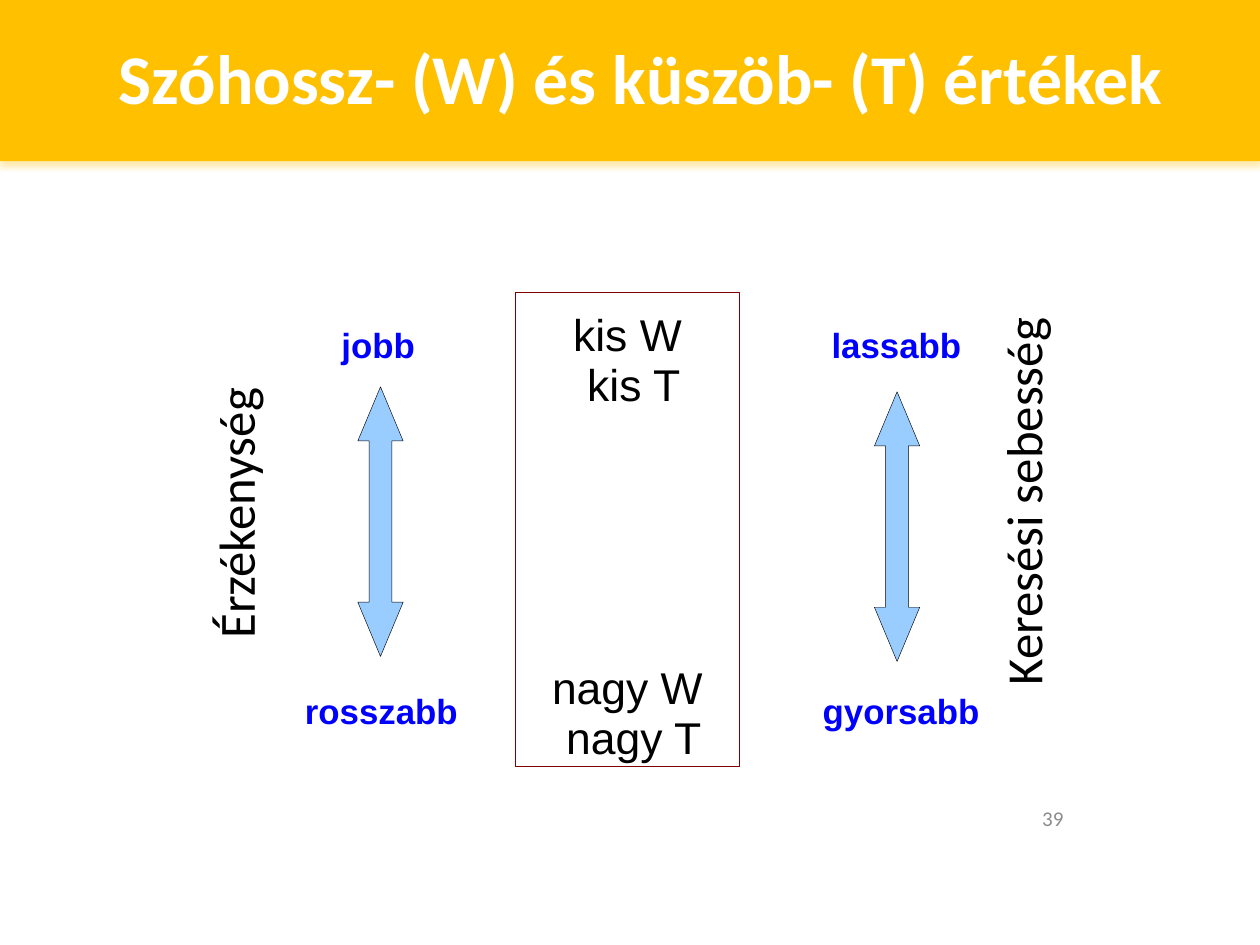
"""Build the slide on word length and threshold values."""
from lxml.etree import SubElement
from pptx import Presentation
from pptx.dml.color import RGBColor
from pptx.enum.shapes import MSO_SHAPE as Kind
from pptx.enum.text import MSO_ANCHOR as Anchor, PP_ALIGN as Align
from pptx.oxml.ns import qn
from pptx.util import Inches, Pt

GOLD = RGBColor(0xFF, 0xC0, 0x00)
WHITE = RGBColor(0xFF, 0xFF, 0xFF)
BLACK = RGBColor(0x00, 0x00, 0x00)
BLUE = RGBColor(0x00, 0x00, 0xFF)
SKY = RGBColor(0x99, 0xCC, 0xFF)
MAROON = RGBColor(0x7F, 0x00, 0x00)
GRAY = RGBColor(0x8C, 0x8C, 0x8C)

TITLE = "Szóhossz- (W) és küszöb- (T) értékek"
NUMBER = "39"
SIZES = [("kis W", 0, 0), ("kis T", 0.1, 0), ("nagy W", 0, 145), ("nagy T", 0.1, 0)]
AXES = [("Érzékenység", (1.7, 3, 0.41, 2.07)),
        ("Keresési sebesség", (7.95, 2.43, 0.41, 3.01))]
ENDS = [("jobb", 2.71, 2.56, 0.61), ("rosszabb", 2.42, 5.46, 1.24),
        ("lassabb", 6.6, 2.56, 1.06), ("gyorsabb", 6.53, 5.46, 1.27)]
ARROWS = [(2.84, 3.07), (6.94, 3.11)]
WIDE, TALL, HEAD = 0.36, 2.14, 0.43


def paint(shape, fill=None, line=None):
    shape.shadow.inherit = False
    if fill is None:
        shape.fill.background()
    else:
        shape.fill.solid()
        shape.fill.fore_color.rgb = fill
    if line is None:
        shape.line.fill.background()
    else:
        shape.line.color.rgb = line
        shape.line.width = Pt(0.25)


def add_box(slide, box, fill=None, line=None):
    shape = slide.shapes.add_shape(Kind.RECTANGLE, *map(Inches, box))
    paint(shape, fill, line)
    return shape


def add_arrow(slide, left, top):
    mid, neck, foot = WIDE / 2, WIDE / 4, TALL - HEAD
    half = [(mid, 0), (WIDE, HEAD), (WIDE - neck, HEAD),
            (WIDE - neck, foot), (WIDE, foot), (mid, TALL)]
    ring = half + [(WIDE - x, y) for x, y in half[-2:0:-1]]
    points = [(Inches(left + x), Inches(top + y)) for x, y in ring]
    pen = slide.shapes.build_freeform(*points[0])
    pen.add_line_segments(points[1:], close=True)
    paint(pen.convert_to_shape(), SKY, BLACK)


def add_shade(shape, color):
    effects = shape._element.spPr.find(qn("a:effectLst"))
    shade = SubElement(effects, qn("a:outerShdw"), blurRad=str(Pt(3.5)),
                       dist=str(Pt(2.2)), dir="5400000", rotWithShape="0")
    tint = SubElement(shade, qn("a:srgbClr"), val=str(color))
    SubElement(tint, qn("a:alpha"), val="32000")


def set_frame(shape, top=0, anchor=Anchor.TOP, wrap=True):
    frame = shape.text_frame
    frame.margin_left = frame.margin_right = frame.margin_bottom = 0
    frame.margin_top = Inches(top)
    frame.vertical_anchor = anchor
    frame.word_wrap = wrap
    return frame


def add_run(para, text, size, font, color, bold=False, align=Align.LEFT):
    para.alignment = align
    run = para.add_run()
    run.text = text
    run.font.size = Pt(size)
    run.font.name = font
    run.font.bold = bold
    run.font.color.rgb = color


def add_text(slide, box, text, size, font, color, bold=False,
             align=Align.LEFT, **style):
    shape = slide.shapes.add_textbox(*map(Inches, box))
    frame = set_frame(shape, **style)
    add_run(frame.paragraphs[0], text, size, font, color, bold, align)
    return frame


def main():
    deck = Presentation()
    deck.slide_width, deck.slide_height = Inches(10), Inches(7.5)
    slide = deck.slides.add_slide(deck.slide_layouts[6])

    band = add_box(slide, (0, -0.02, 10, 1.3), GOLD)
    add_shade(band, GOLD)
    add_text(slide, (0.2, 0.26, 9.78, 0.68), TITLE, 39.9, "Calibri", WHITE, True,
             Align.CENTER, top=0.01, anchor=Anchor.MIDDLE)

    panel = add_box(slide, (4.09, 2.32, 1.78, 3.76), line=MAROON)
    frame = set_frame(panel, top=0.15)
    for i, (text, indent, gap) in enumerate(SIZES):
        para = frame.add_paragraph() if i else frame.paragraphs[0]
        para.line_spacing = Pt(28.3)
        para.space_before = Pt(gap)
        para._p.get_or_add_pPr().set("marL", str(Inches(indent)))
        add_run(para, text, 25.4, "Arial", BLACK, align=Align.CENTER)

    for text, box in AXES:
        frame = add_text(slide, box, text, 29, "Calibri", BLACK)
        frame.paragraphs[0].line_spacing = Pt(29)
        frame._txBody.bodyPr.set("vert", "vert270")

    for left, top in ARROWS:
        add_arrow(slide, left, top)

    for text, left, top, width in ENDS:
        add_text(slide, (left, top, width, 0.35), text, 19.9, "Arial", BLUE, True,
                 top=0.01, wrap=False)

    add_text(slide, (6.4, 6.39, 2.04, 0.2), NUMBER, 12, "Calibri", GRAY,
             align=Align.RIGHT, anchor=Anchor.MIDDLE)
    deck.save("out.pptx")


if __name__ == "__main__":
    main()
